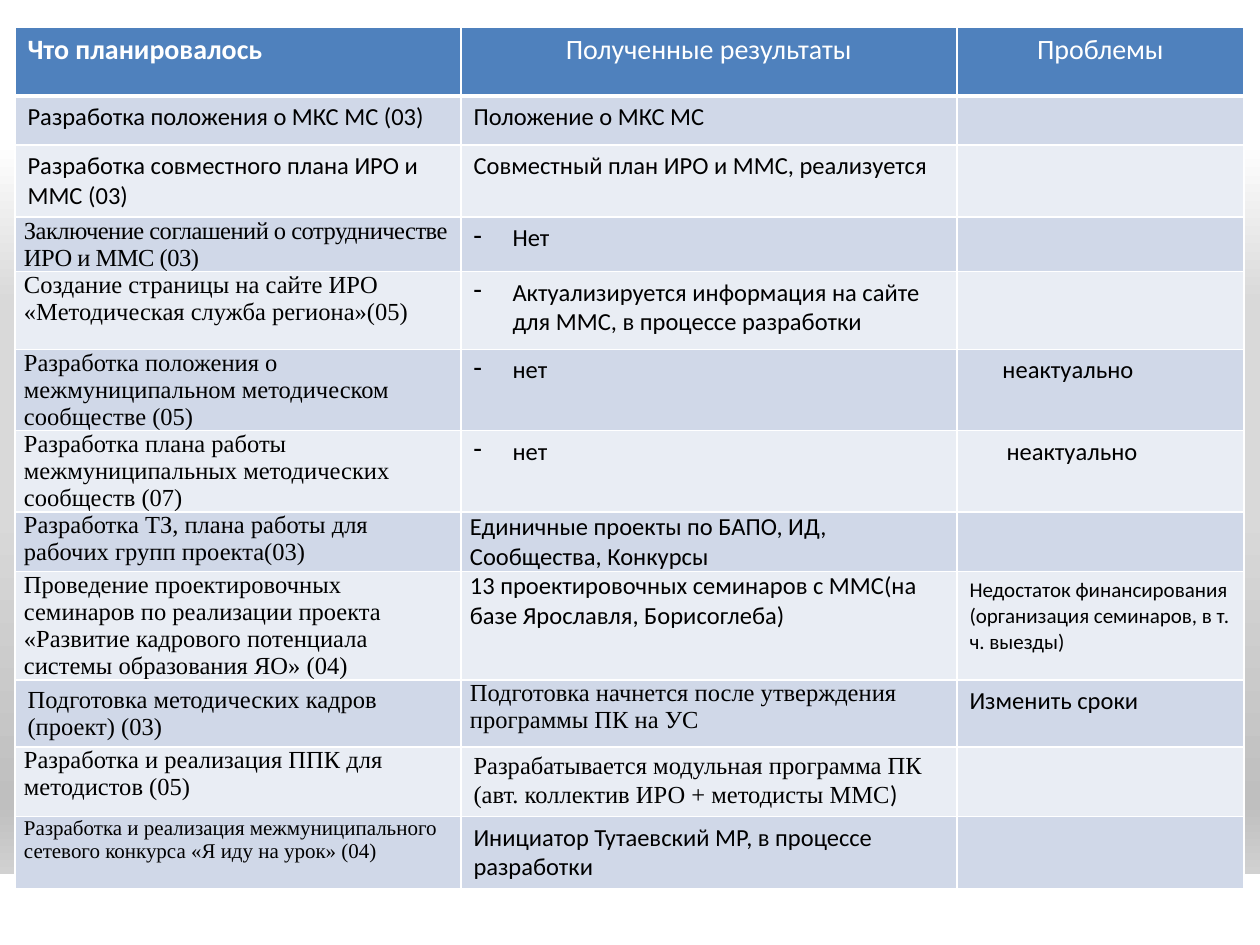
from lxml import etree
from pptx import Presentation
from pptx.dml.color import RGBColor
from pptx.enum.shapes import MSO_SHAPE
from pptx.enum.text import PP_ALIGN
from pptx.oxml.ns import qn
from pptx.util import Pt

RECTANGLE = MSO_SHAPE.RECTANGLE
CENTER = PP_ALIGN.CENTER
PX = 914400 / 126

THEME = {
    "sans": "Calibri", "serif": "Times New Roman",
    "header_size": 16, "body_size": 14, "note_size": 12,
    "white": "FFFFFF", "text": "000000", "header": "4F81BD",
    "bands": ["D0D8E8", "E9EDF4"],
    "gradient": [(0, "FFFFFF"), (15, "FFFFFF"), (32, "D9D9D9"),
                 (54, "D9D9D9"), (85, "BFBFBF"), (100, "E6E6E6")],
}

# Cell styles
HEAD = {"size": "header_size", "color": "white", "align": CENTER}
HEAD_BOLD = {"size": "header_size", "color": "white", "bold": True}
BODY = {}
SPACED = {"after": 10}
DASH = {"indent": 39, "bullet": "-"}
SHIFTED = {"indent": 33}
SHIFTED_MORE = {"indent": 37}
NOTE = {"size": "note_size"}
SERIF = {"font": "serif"}
TIGHT = {"tight": True}
TIGHT_SERIF = {"tight": True, "font": "serif"}
CONDENSED = {"tight": True, "font": "serif", "spacing": -30}
TIGHT_NOTE = {"tight": True, "font": "serif", "size": "note_size"}

EMPTY = ("", BODY)
COLUMN_WIDTHS = [446, 496, 287]
# Least row height, then the three cells as (text, style)
ROWS = [
    (69, ("Что планировалось", HEAD_BOLD), ("Полученные результаты", HEAD), ("Проблемы", HEAD)),
    (49, ("Разработка положения о МКС МС (03)", BODY), ("Положение о МКС МС", BODY), EMPTY),
    (59, ("Разработка совместного плана ИРО и ММС (03)", SPACED),
     ("Совместный план ИРО и ММС, реализуется", BODY), EMPTY),
    (47, ("Заключение соглашений о сотрудничестве ИРО и ММС (03)", CONDENSED),
     ("Нет", DASH), EMPTY),
    (78, ("Создание страницы на сайте ИРО «Методическая служба региона»(05)", TIGHT_SERIF),
     ("Актуализируется информация на сайте для ММС, в процессе разработки", DASH), EMPTY),
    (60, ("Разработка положения о межмуниципальном методическом сообществе (05)", TIGHT_SERIF),
     ("нет", DASH), ("неактуально", SHIFTED)),
    (59, ("Разработка плана работы межмуниципальных методических сообществ (07)", TIGHT_SERIF),
     ("нет", DASH), ("неактуально", SHIFTED_MORE)),
    (59, ("Разработка ТЗ, плана работы для рабочих групп проекта(03)", TIGHT_SERIF),
     ("Единичные проекты по БАПО, ИД, Сообщества, Конкурсы", TIGHT), EMPTY),
    (59, ("Проведение проектировочных семинаров по реализации проекта "
          "«Развитие кадрового потенциала системы образования ЯО» (04)", TIGHT_SERIF),
     ("13 проектировочных семинаров с ММС(на базе Ярославля, Борисоглеба)", TIGHT),
     ("Недостаток финансирования (организация семинаров, в т. ч. выезды)", NOTE)),
    (59, ("Подготовка методических кадров (проект) (03)", SERIF),
     ("Подготовка начнется после утверждения программы ПК на УС", TIGHT_SERIF),
     ("Изменить сроки", BODY)),
    (63, ("Разработка и реализация ППК для методистов (05)", TIGHT_SERIF),
     ("Разрабатывается модульная программа ПК (авт. коллектив ИРО + методисты ММС",
      {"font": "serif", "tail": ")"}), EMPTY),
    (59, ("Разработка и реализация межмуниципального сетевого конкурса «Я иду на урок» (04)",
          TIGHT_NOTE),
     ("Инициатор Тутаевский МР, в процессе разработки", BODY), EMPTY),
]


def px(length):
    return round(length * PX)


def add_span(para, text, style, font):
    span = para.add_run()
    span.text = text
    span.font.name = THEME[font]
    span.font.size = Pt(THEME[style.get("size", "body_size")])
    span.font.bold = style.get("bold", False)
    span.font.color.rgb = RGBColor.from_string(THEME[style.get("color", "text")])
    if "spacing" in style:
        span.font._element.set("spc", str(style["spacing"]))


deck = Presentation()
deck.slide_width, deck.slide_height = px(1260), px(945)
page = deck.slides.add_slide(deck.slide_layouts[6])

# Background gradient, from top to bottom
backdrop = page.background.fill
backdrop.gradient()
backdrop.gradient_angle = 270
stops = next(page.element.iter(qn("a:gsLst")))
for stop in list(stops):
    stops.remove(stop)
for position, color in THEME["gradient"]:
    stop = etree.SubElement(stops, qn("a:gs"), pos=str(position * 1000))
    etree.SubElement(stop, qn("a:srgbClr"), val=color)

# White strip at the foot
strip = page.shapes.add_shape(RECTANGLE, 0, px(874), px(1261), px(71))
strip.shadow.inherit = False
strip.fill.solid()
strip.fill.fore_color.rgb = RGBColor.from_string(THEME["white"])
strip.line.fill.background()

# Table
frame = page.shapes.add_table(len(ROWS), len(COLUMN_WIDTHS), px(15), px(27),
                              px(sum(COLUMN_WIDTHS)), px(900))
table = frame.table
table.first_row = table.horz_banding = False
for column, width in zip(table.columns, COLUMN_WIDTHS):
    column.width = px(width)

for row_index, (height, *entries) in enumerate(ROWS):
    table.rows[row_index].height = px(height)
    is_header = row_index == 0
    band = THEME["header"] if is_header else THEME["bands"][(row_index - 1) % 2]
    for column_index, (text, style) in enumerate(entries):
        cell = table.cell(row_index, column_index)
        cell.fill.solid()
        cell.fill.fore_color.rgb = RGBColor.from_string(band)
        if style.get("tight"):
            cell.margin_left = cell.margin_right = px(9)
            cell.margin_top = cell.margin_bottom = 0

        # Borders come before the fill in the cell properties
        properties = cell._tc.get_or_add_tcPr()
        for order, side in enumerate(["lnL", "lnR", "lnT", "lnB"]):
            points = 3 if is_header and side == "lnB" else 1
            border = etree.Element(qn("a:" + side), w=str(Pt(points)))
            paint = etree.SubElement(border, qn("a:solidFill"))
            etree.SubElement(paint, qn("a:srgbClr"), val=THEME["white"])
            properties.insert(order, border)

        # Text
        para = cell.text_frame.paragraphs[0]
        if "align" in style:
            para.alignment = style["align"]
        if "after" in style:
            para.space_after = Pt(style["after"])
        if "indent" in style:
            layout = para._p.get_or_add_pPr()
            layout.set("marL", str(px(style["indent"])))
            layout.set("indent", "0")
            if "bullet" in style:
                layout.set("indent", str(-px(style["indent"])))
                etree.SubElement(layout, qn("a:buChar"), char=style["bullet"])
        if text:
            add_span(para, text, style, style.get("font", "sans"))
        else:
            etree.SubElement(para._p, qn("a:endParaRPr"), sz=str(THEME["body_size"] * 100))
        if "tail" in style:
            add_span(para, style["tail"], style, "sans")

frame.height = px(900)
deck.save("out.pptx")
